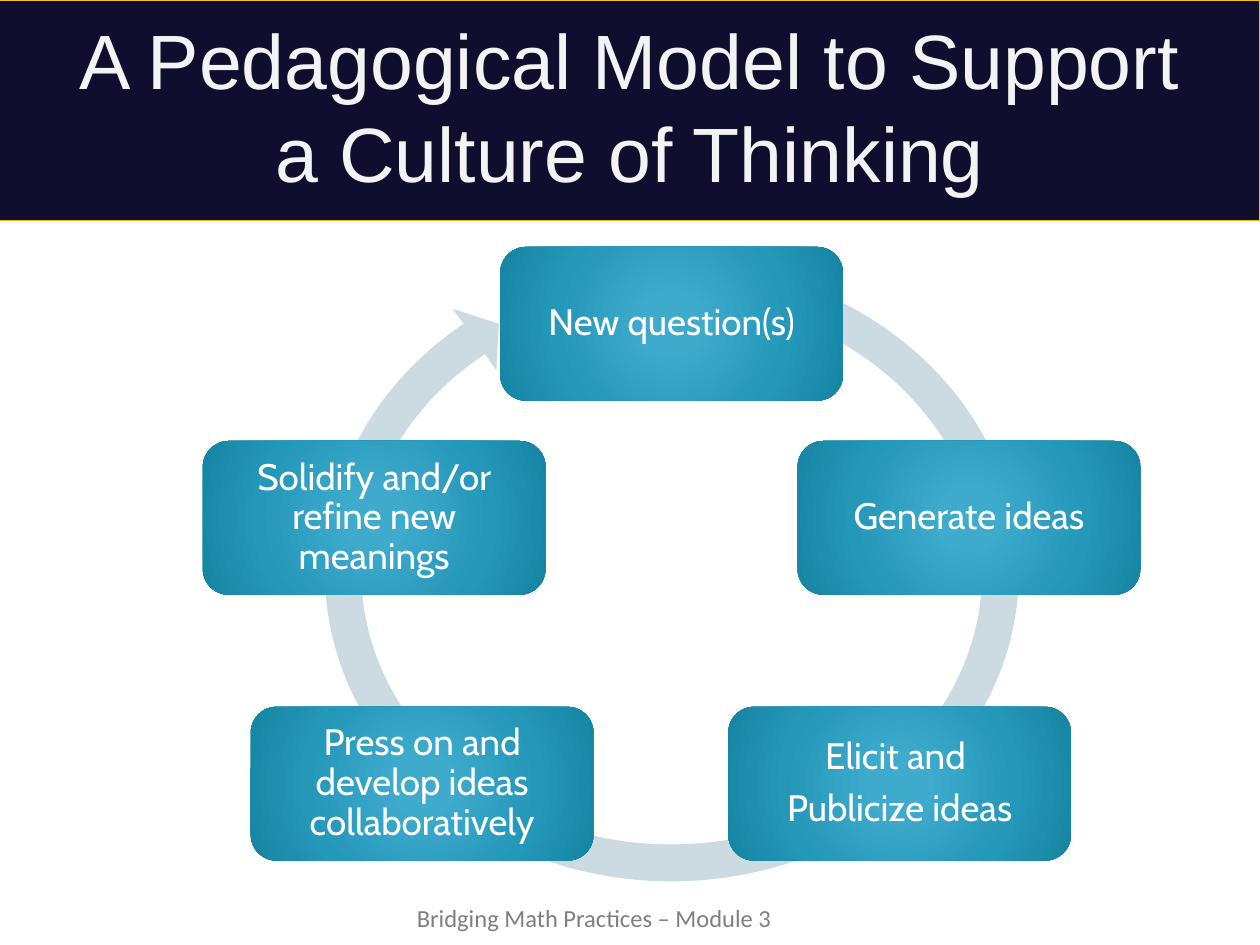
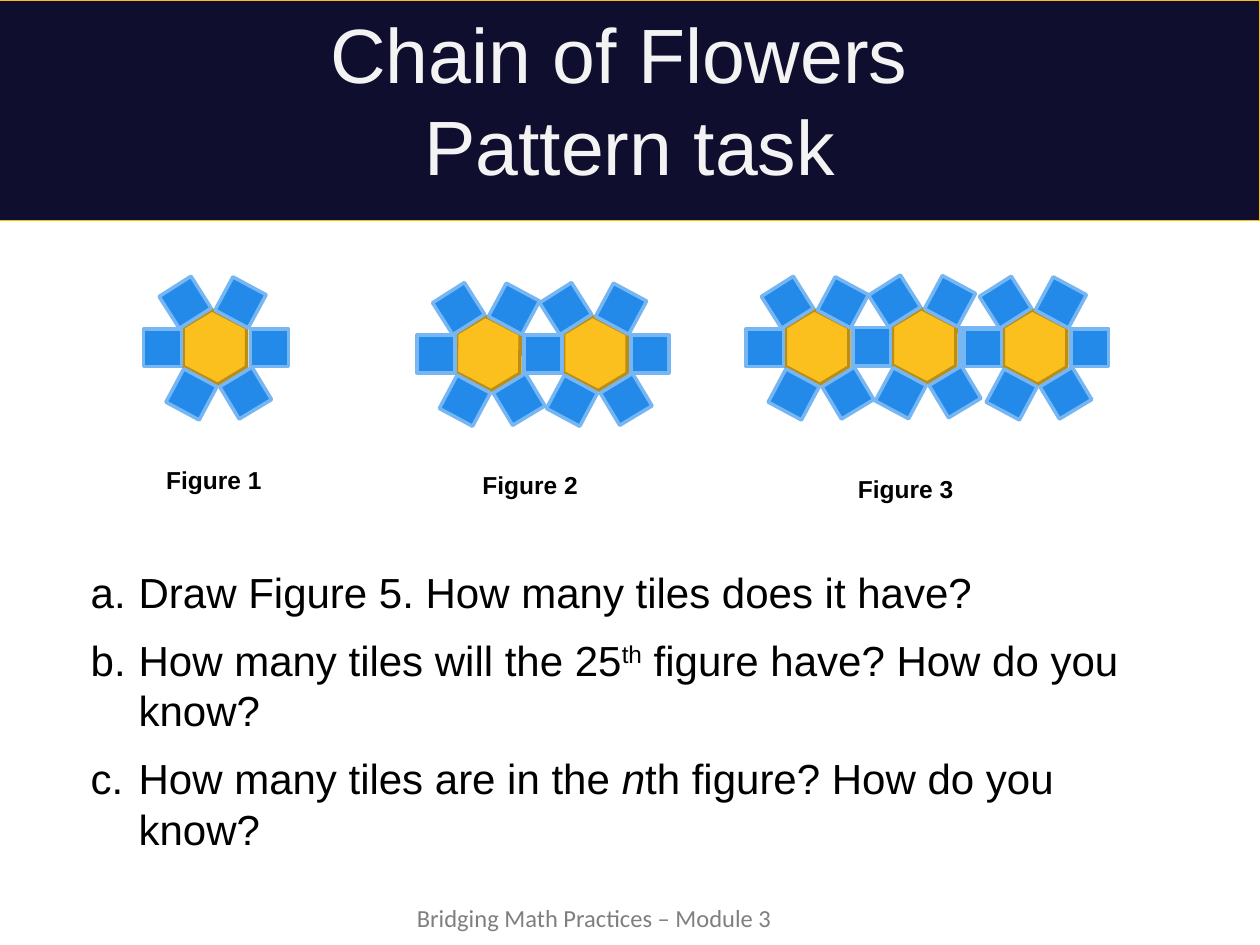
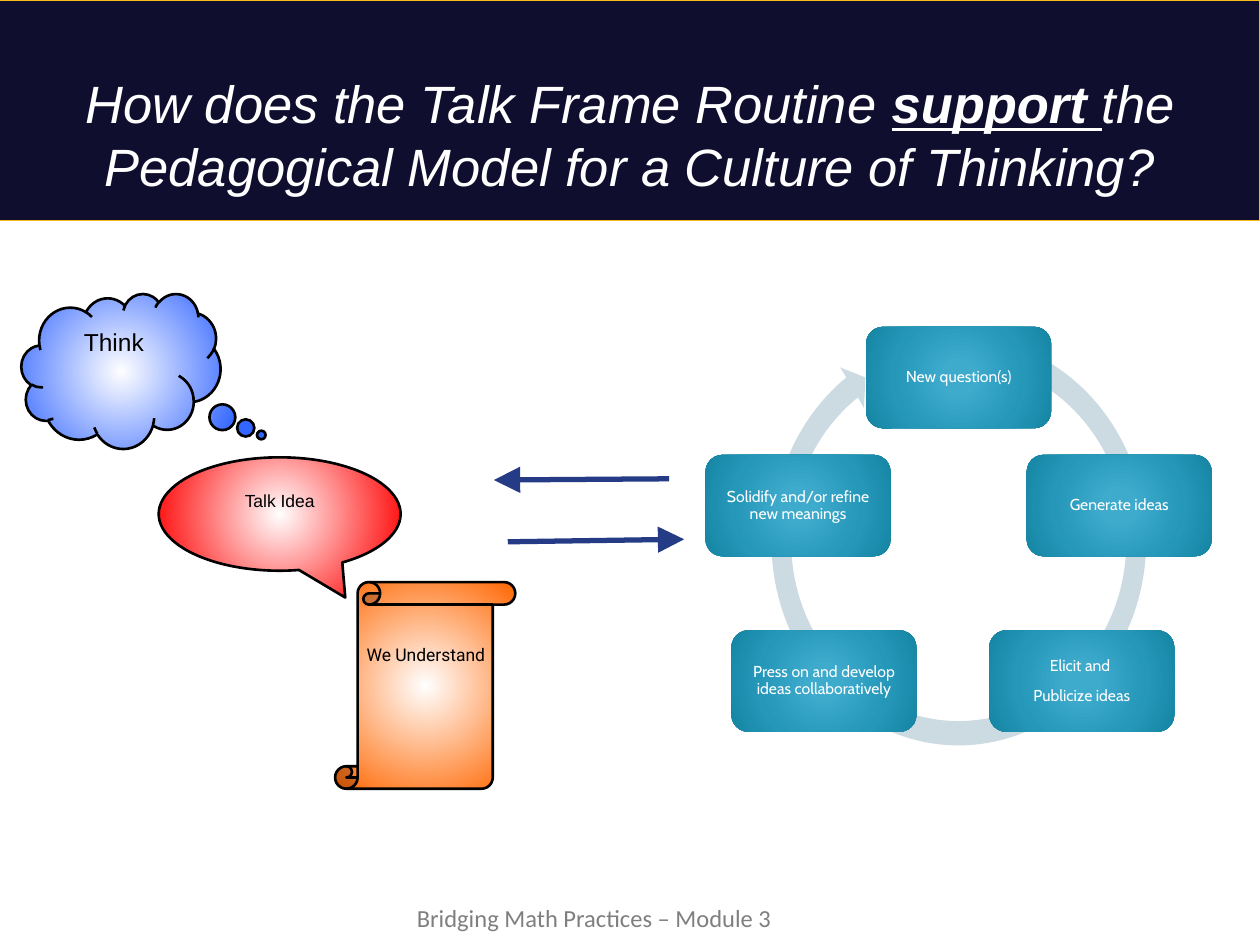
from dataclasses import dataclass

from lxml import etree
from pptx import Presentation
from pptx.dml.color import RGBColor
from pptx.enum.shapes import MSO_CONNECTOR, MSO_SHAPE
from pptx.enum.text import MSO_ANCHOR, MSO_AUTO_SIZE, PP_ALIGN
from pptx.oxml import parse_xml
from pptx.oxml.ns import nsdecls, qn
from pptx.util import Inches, Pt

RECT, ROUND = MSO_SHAPE.RECTANGLE, MSO_SHAPE.ROUNDED_RECTANGLE
HEX, CLOUD = MSO_SHAPE.HEXAGON, MSO_SHAPE.CLOUD_CALLOUT
OVAL, SCROLL = MSO_SHAPE.OVAL_CALLOUT, MSO_SHAPE.VERTICAL_SCROLL
STRAIGHT = MSO_CONNECTOR.STRAIGHT
LEFT, CENTER = PP_ALIGN.LEFT, PP_ALIGN.CENTER
TOP, MIDDLE = MSO_ANCHOR.TOP, MSO_ANCHOR.MIDDLE
NO_FIT = MSO_AUTO_SIZE.NONE

NAVY, GOLD, PALE, GREY = "100E2F", "FABD17", "F3F3F3", "7F7F7F"
WHITE, BLACK, RING, BLUE = "FFFFFF", "000000", "CCDBE1", "263B86"
HONEY, BROWN, PETAL, EDGE = "FBC01E", "BA8E16", "248AEA", "76B6F2"
TEAL = [(0, "3FABCD"), (15, "3EAACC"), (62, "2597B9"),
        (97, "1786A5"), (100, "0985A6")]

Point = tuple[float, float]
Box = tuple[float, float, float, float]


@dataclass
class Run:
    text: str
    bold: bool = False
    slant: bool = False
    under: bool = False
    raised: bool = False


@dataclass
class Style:
    size: float
    font: str = "Arial"
    hue: str = BLACK
    align: PP_ALIGN = CENTER
    pitch: float = 1.0
    before: float = 0
    after: float = 0
    letters: bool = False


@dataclass
class Cycle:
    """Maps the full-size cycle onto a slide and sets its text size."""
    left: float
    top: float
    wide: float
    high: float
    size: float

    def place(self, x: float, y: float) -> Point:
        return self.left + self.wide * x, self.top + self.high * y


@dataclass
class Bubble:
    kind: MSO_SHAPE
    box: Box
    bend: list[float]
    hue: str
    text: str = ""
    size: float = 10
    inset: float = 0.1


# The cycle at full size: each curve is a chain of cubic Bezier points
OUTER = [(6.17, 2.2), (7.38, 2.55), (8.17, 3.58), (8.08, 4.71), (7.99, 5.84),
         (7.04, 6.77), (5.79, 6.96), (4.54, 7.15), (3.3, 6.55), (2.8, 5.51),
         (2.3, 4.46), (2.67, 3.25), (3.68, 2.57)]
HEAD = [(3.59, 2.45), (3.96, 2.57), (3.94, 2.94)]
INNER = [(3.85, 2.81), (2.94, 3.41), (2.62, 4.48), (3.07, 5.4), (3.53, 6.32),
         (4.63, 6.84), (5.75, 6.67), (6.87, 6.5), (7.72, 5.68), (7.79, 4.68),
         (7.87, 3.69), (7.16, 2.77), (6.07, 2.47)]
STEP_SIZE = (2.72, 1.22)
STEPS = [
    ((3.97, 1.96), ["New question(s)"]),
    ((6.33, 3.5), ["Generate ideas"]),
    ((5.78, 5.61), ["Elicit and ", "Publicize ideas"]),
    ((1.99, 5.61), ["Press on and develop ideas collaboratively"]),
    ((1.61, 3.5), ["Solidify and/or refine new meanings"]),
]

# Petals of a flower: offset from the hexagon, and turn; the right one first
PETALS = [(0.58, 0.12, 0), (0.35, -0.24, 298.3), (-0.27, 0.12, 0),
          (-0.09, -0.24, 327.6), (0.39, 0.48, 328.9), (-0.04, 0.49, 298.2)]
FLOWERS = [(1.41, 2.49, True), (3.58, 2.54, False), (4.43, 2.54, True),
           (6.19, 2.49, True), (7.04, 2.48, True), (7.92, 2.49, True)]
LABELS = [(1.22, 3.64), (3.73, 3.68), (6.71, 3.71)]
TASKS = [
    [Run("Draw Figure 5. How many tiles does it have?")],
    [Run("How many tiles will the 25"), Run("th", raised=True),
     Run(" figure have? How do you know?")],
    [Run("How many tiles are in the "), Run("n", slant=True),
     Run("th figure? How do you know?")],
]

BUBBLES = [
    Bubble(CLOUD, (0.17, 2.33, 1.58, 1.23), [0.705, 0.413], "3366FF",
           "Think", 14, 0.05),
    Bubble(OVAL, (1.26, 3.63, 1.92, 0.9), [0.271, 0.737], "FF0000",
           "Talk Idea"),
    Bubble(SCROLL, (2.66, 4.62, 1.43, 1.64), [0.125], "FF6600"),
]
ARROWS = [((4.03, 4.3), (5.43, 4.28)), ((5.31, 3.8), (3.92, 3.81))]


def color(code: str) -> RGBColor:
    return RGBColor.from_string(code)


def emu(values) -> list[int]:
    return [Inches(v) for v in values]


# Text
def write(frame, paras: list[list[Run]], style: Style, anchor=TOP,
          insets: Box = (0.1, 0.05, 0.1, 0.05)) -> None:
    frame.auto_size = NO_FIT
    frame.word_wrap = True
    frame.vertical_anchor = anchor
    (frame.margin_left, frame.margin_top,
     frame.margin_right, frame.margin_bottom) = emu(insets)
    for i, runs in enumerate(paras):
        para = frame.add_paragraph() if i else frame.paragraphs[0]
        para.alignment = style.align
        para.line_spacing = style.pitch
        para.space_before = Pt(style.before if i else 0)
        para.space_after = Pt(style.after)
        if style.letters:
            letter(para)
        for item in runs:
            run = para.add_run()
            run.text = item.text
            font = run.font
            font.name, font.size = style.font, Pt(style.size)
            font.color.rgb = color(style.hue)
            font.bold, font.italic = item.bold, item.slant
            font.underline = item.under
            if item.raised:
                run._r.get_or_add_rPr().set("baseline", "30000")


def letter(para) -> None:
    props = para._p.get_or_add_pPr()
    props.set("marL", str(Inches(0.5)))
    props.set("indent", str(Inches(-0.38)))
    tint = etree.SubElement(props, qn("a:buClr"))
    etree.SubElement(tint, qn("a:srgbClr"), val=BLACK)
    etree.SubElement(props, qn("a:buAutoNum"), type="alphaLcPeriod")


def label(slide, box: Box, run: Run, style: Style):
    shape = slide.shapes.add_textbox(*emu(box))
    write(shape.text_frame, [[run]], style)
    return shape


# Shapes
def paint(shape, fill, line: str = "", width: float = 0) -> None:
    shape.shadow.inherit = False
    if isinstance(fill, str):
        shape.fill.solid()
        shape.fill.fore_color.rgb = color(fill)
    else:
        glow(shape, fill)
    if line:
        shape.line.color.rgb = color(line)
        shape.line.width = Pt(width)
    else:
        shape.line.fill.background()


def glow(shape, stops: list[tuple[int, str]]) -> None:
    shape.fill.background()
    marks = "".join(f'<a:gs pos="{pos * 1000}"><a:srgbClr val="{hue}"/></a:gs>'
                    for pos, hue in stops)
    grad = parse_xml(
        f'<a:gradFill {nsdecls("a")}><a:gsLst>{marks}</a:gsLst>'
        '<a:path path="circle"><a:fillToRect l="50000" t="50000" r="50000"'
        ' b="50000"/></a:path></a:gradFill>')
    props = shape._element.spPr
    props.replace(props.find(qn("a:noFill")), grad)


def draw(slide, kind, box: Box, fill, line: str = "", width: float = 0,
         bend: list[float] = (), turn: float = 0):
    shape = slide.shapes.add_shape(kind, *emu(box))
    for i, value in enumerate(bend):
        shape.adjustments[i] = value
    shape.rotation = turn
    paint(shape, fill, line, width)
    return shape


def arrow(slide, start: Point, end: Point) -> None:
    link = slide.shapes.add_connector(STRAIGHT, *emu(start + end))
    link.line.color.rgb = color(BLUE)
    link.line.width = Pt(3)
    etree.SubElement(link.line._get_or_add_ln(), qn("a:tailEnd"),
                     type="triangle", w="lg", len="lg")
    etree.SubElement(link._element.spPr, qn("a:effectLst"))


# The cycle
def bow(shape, first: int, count: int) -> None:
    """Turn straight segments, three at a time, into cubic curves."""
    lines = list(shape._element.iter(qn("a:lnTo")))[first:first + count]
    for i in range(0, count, 3):
        cubic = etree.Element(qn("a:cubicBezTo"))
        lines[i].addprevious(cubic)
        for line in lines[i:i + 3]:
            cubic.append(line[0])
            line.getparent().remove(line)


def draw_cycle(slide, cycle: Cycle) -> None:
    points = [emu(cycle.place(*p)) for p in OUTER + HEAD + INNER]
    path = slide.shapes.build_freeform(*points[0])
    path.add_line_segments(points[1:], close=True)
    ring = path.convert_to_shape()
    bow(ring, len(OUTER) + len(HEAD), len(INNER) - 1)
    bow(ring, 0, len(OUTER) - 1)
    paint(ring, RING)
    size = (STEP_SIZE[0] * cycle.wide, STEP_SIZE[1] * cycle.high)
    style = Style(cycle.size, "Cabin", WHITE, pitch=0.9, before=7.3)
    for spot, lines in STEPS:
        step = draw(slide, ROUND, cycle.place(*spot) + size, TEAL,
                    bend=[0.167])
        write(step.text_frame, [[Run(line)] for line in lines], style,
              MIDDLE, (0.09,) * 4)


# Shared parts
def dress(deck, slide) -> None:
    """Put the band and the footer on the slide master."""
    band = draw(slide, RECT, (-0.04, 0, 10.04, 1.75), NAVY, GOLD, 0.75)
    foot = label(slide, (3.21, 7.12, 3.2, 0.34),
                 Run("Bridging Math Practices – Module 3"),
                 Style(14, "Calibri", GREY, LEFT))
    tree = deck.slide_master.shapes._spTree
    for i, shape in enumerate((band, foot)):
        shape._element.nvSpPr.cNvPr.set("id", str(100 + i))
        tree.insert(2 + i, shape._element)


def head(slide, box: Box, paras: list[list[Run]], style: Style,
         base: float = 0.1) -> None:
    title = slide.shapes.title
    title.left, title.top, title.width, title.height = emu(box)
    write(title.text_frame, paras, style, MIDDLE, (0.1, 0.1, 0.1, base))


def main() -> None:
    deck = Presentation()
    deck.slide_width, deck.slide_height = Inches(10), Inches(7.5)
    listed, plain = deck.slide_layouts[1], deck.slide_layouts[5]
    large = Style(44, hue=PALE)

    # Slide 1: the model
    model = deck.slides.add_slide(plain)
    dress(deck, model)
    head(model, (0.5, 0.58, 9, 1.25),
         [[Run("A Pedagogical Model to Support a Culture of Thinking")]],
         large, 0.84)
    draw_cycle(model, Cycle(0, 0, 1, 1, 21))

    # Slide 2: the flower task
    task = deck.slides.add_slide(listed)
    head(task, (0.5, 0.33, 9, 1.65),
         [[Run("Chain of Flowers ")], [Run("Pattern task")]], large, 0.84)
    body = task.placeholders[1]
    body.left, body.top, body.width, body.height = emu((0.5, 4.31, 8.78, 2.45))
    write(body.text_frame, TASKS,
          Style(24, align=LEFT, after=10, letters=True),
          MIDDLE, (0.1, 0.3, 0.1, 0.1))
    for x, y, right in FLOWERS:
        draw(task, HEX, (x, y, 0.59, 0.53), HONEY, BROWN, 2, [0.304], 328.8)
        for dx, dy, turn in PETALS if right else PETALS[1:]:
            draw(task, RECT, (x + dx, y + dy, 0.3, 0.3), PETAL, EDGE, 2,
                 turn=turn)
    for i, spot in enumerate(LABELS, 1):
        label(task, spot + (1.41, 0.34), Run(f"Figure {i}", bold=True),
              Style(14, align=LEFT))

    # Slide 3: talk frame and model
    frame = deck.slides.add_slide(plain)
    head(frame, (0, 0.44, 10, 1.25),
         [[Run("How does the Talk Frame Routine ", slant=True),
           Run("support ", bold=True, slant=True, under=True),
           Run("the Pedagogical Model for a Culture of Thinking?",
               slant=True)]],
         Style(30, hue=WHITE))
    draw_cycle(frame, Cycle(4.73, 1.3, 0.54, 0.66, 9))
    for item in BUBBLES:
        shape = draw(frame, item.kind, item.box,
                     [(0, WHITE), (100, item.hue)], BLACK, 1.5, item.bend)
        if item.text:
            write(shape.text_frame, [[Run(item.text)]],
                  Style(item.size, pitch=1.15), TOP,
                  (0.1, item.inset, 0.1, item.inset))
    label(frame, (2.76, 5.04, 1.24, 0.6), Run("We Understand"),
          Style(10, "Roboto", pitch=1.15))
    for start, end in ARROWS:
        arrow(frame, start, end)

    deck.save("out.pptx")


if __name__ == "__main__":
    main()
